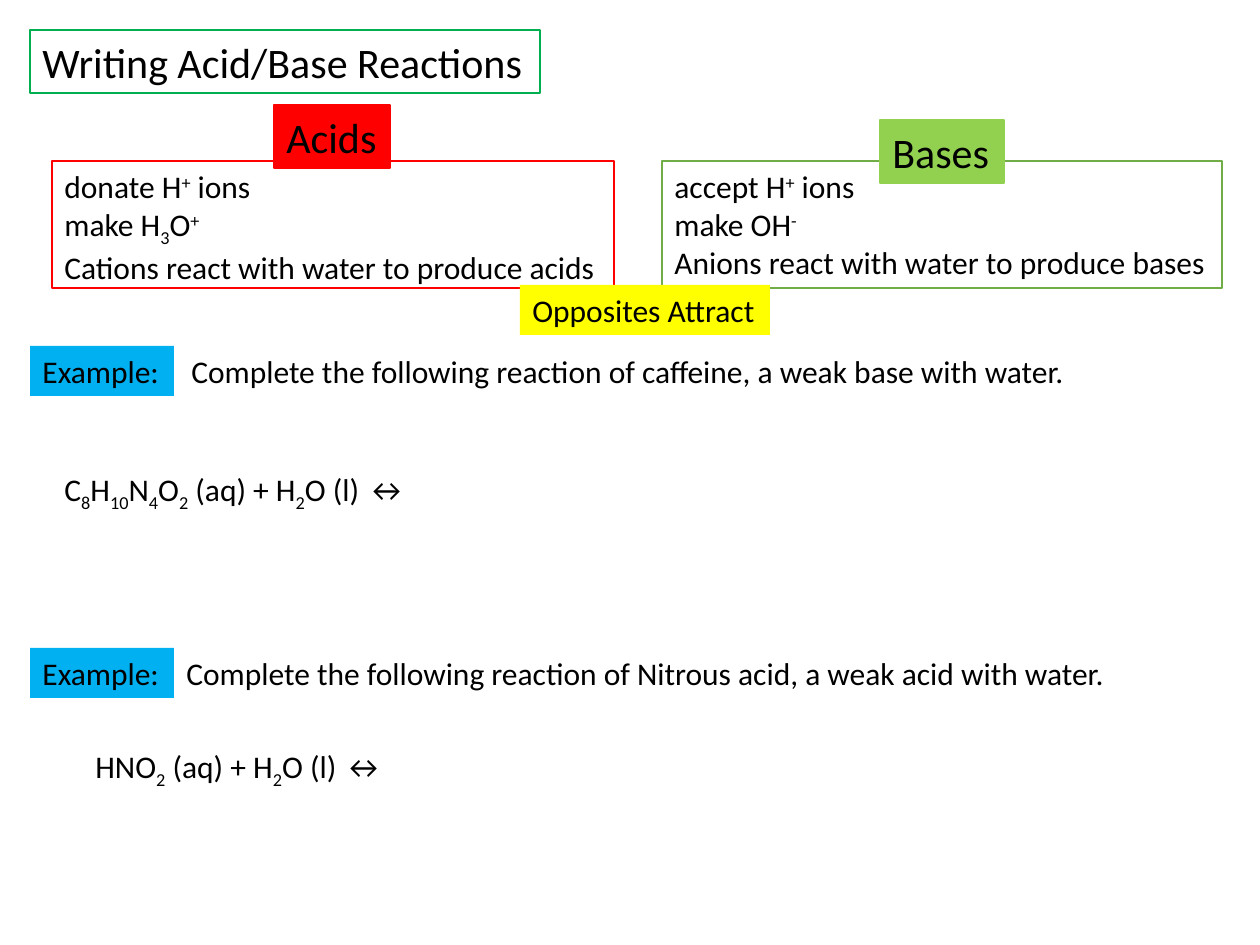
from pptx import Presentation
from pptx.dml.color import RGBColor
from pptx.enum.shapes import MSO_SHAPE
from pptx.enum.text import MSO_ANCHOR, MSO_AUTO_SIZE, PP_ALIGN
from pptx.util import Emu, Pt

RECT = MSO_SHAPE.RECTANGLE
TOP = MSO_ANCHOR.TOP
FIT = MSO_AUTO_SIZE.SHAPE_TO_FIT_TEXT
LEFT = PP_ALIGN.LEFT
PX_PER_INCH = 126
BASELINES = {"_": "-25000", "^": "30000"}
MARGIN = 30
LABEL_W, LINE_H, HEAD_H = 144, 50, 63
PANEL_Y, PANEL_H = 161, 127


def px(n):
    """Turn pixels into EMU."""
    return Emu(round(n * 914400 / PX_PER_INCH))


def color(value):
    """Turn a hex string into a colour."""
    return RGBColor.from_string(value)


def write(sp, lines, size, wrap=False):
    """Write lines whose parts, split by |, start with _ or ^ if lowered or raised."""
    tf = sp.text_frame
    tf.word_wrap = wrap
    tf.auto_size = FIT
    tf.vertical_anchor = TOP
    for i, line in enumerate(lines):
        p = tf.add_paragraph() if i else tf.paragraphs[0]
        p.alignment = LEFT
        for part in line.split("|"):
            r = p.add_run()
            r.text = part.lstrip("_^")
            r.font.size = Pt(size)
            r.font.name = "Calibri"
            r.font.color.rgb = color("000000")
            if part[0] in BASELINES:
                r.font._element.set("baseline", BASELINES[part[0]])


def add_box(s, box, lines, size=18, fill=None, line=None, weight=0.75, wrap=False):
    """Add a rectangle with text."""
    sp = s.shapes.add_shape(RECT, *map(px, box))
    sp.shadow.inherit = False
    if fill:
        sp.fill.solid()
        sp.fill.fore_color.rgb = color(fill)
    else:
        sp.fill.background()
    if line:
        sp.line.color.rgb = color(line)
        sp.line.width = Pt(weight)
    else:
        sp.line.fill.background()
    write(sp, lines, size, wrap)


def add_text(s, x, y, w, text):
    """Add one line of plain text."""
    write(s.shapes.add_textbox(px(x), px(y), px(w), px(LINE_H)), [text], 18)


def add_example(s, y, task, equation):
    """Add an example label, its task and its equation."""
    add_box(s, (MARGIN, y, LABEL_W, LINE_H), ["Example:"], fill="00B0F0")
    task_x, task_w, text = task
    add_text(s, task_x, y, task_w, text)
    add_text(s, *equation)


def main():
    """Build the slide."""
    prs = Presentation()
    prs.slide_width, prs.slide_height = px(1260), px(945)
    s = prs.slides.add_slide(prs.slide_layouts[6])

    add_box(s, (MARGIN, 30, 510, HEAD_H), ["Writing Acid/Base Reactions"], 24, line="00B050")
    add_box(s, (52, PANEL_Y, 562, PANEL_H),
            ["donate H|^+| ions", "make H|_3|O|^+",
             "Cations react with water to produce acids"], line="FF0000")
    add_box(s, (662, PANEL_Y, 560, PANEL_H),
            ["accept H|^+| ions", "make OH|^-",
             "Anions react with water to produce bases"],
            fill="FFFFFF", line="70AD47", weight=1, wrap=True)
    add_box(s, (274, 105, 116, HEAD_H), ["Acids"], 24, fill="FF0000", line="FF0000")
    add_box(s, (880, 120, 124, HEAD_H), ["Bases"], 24, fill="92D050", line="92D050")
    add_box(s, (520, 285, 250, LINE_H), ["Opposites Attract"], fill="FFFF00")

    add_example(
        s, 346,
        (179, 908, "Complete the following reaction of caffeine, a weak base with water."),
        (52, 464, 380, "C|_8|H|_10|N|_4|O|_2| (aq) + H|_2|O (l) ↔"))
    add_example(
        s, 648,
        (174, 955, "Complete the following reaction of Nitrous acid, a weak acid with water."),
        (83, 741, 321, "HNO|_2| (aq) + H|_2|O (l) ↔"))
    prs.save("out.pptx")


if __name__ == "__main__":
    main()
